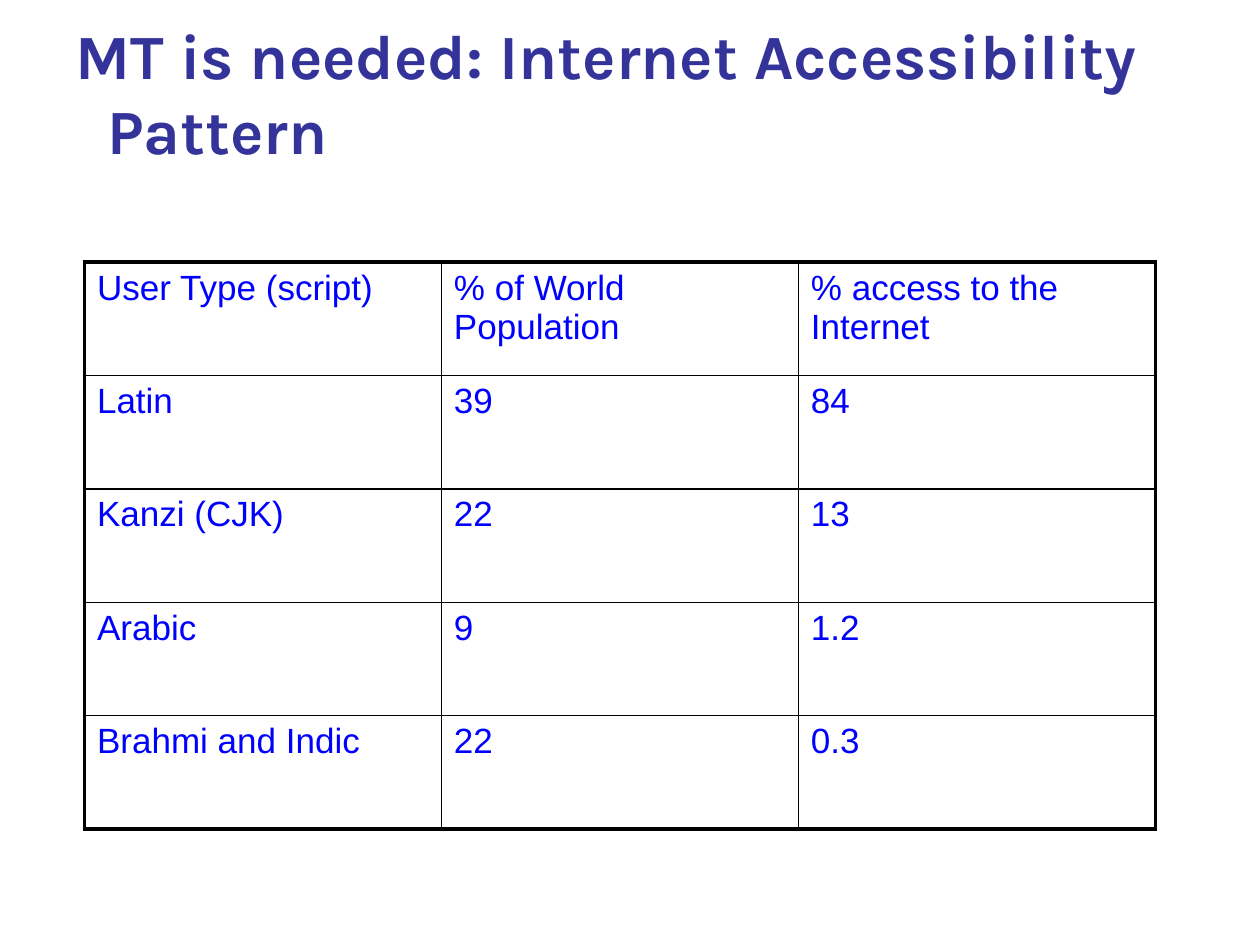
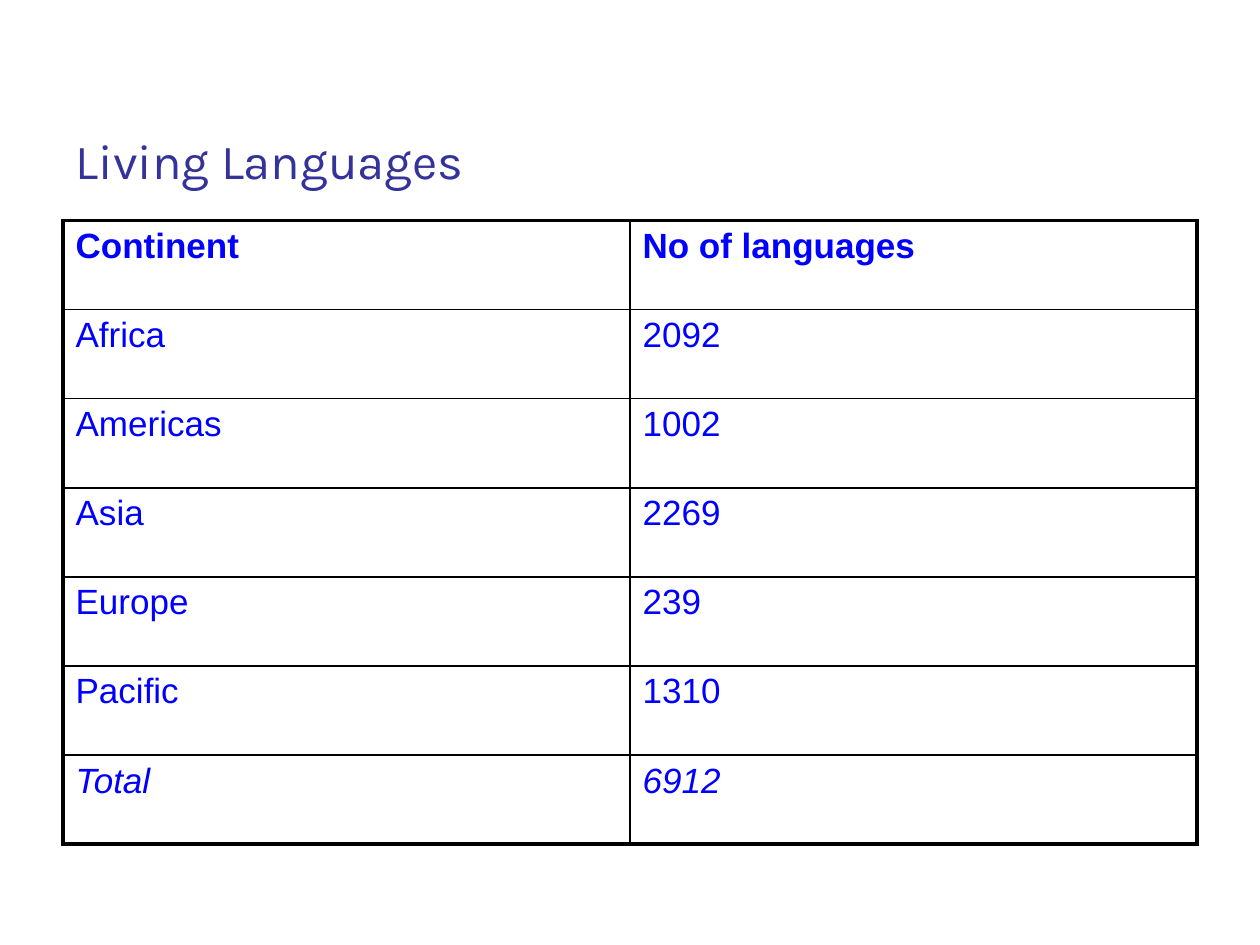
from lxml.etree import SubElement
from pptx import Presentation
from pptx.dml.color import RGBColor
from pptx.enum.text import MSO_ANCHOR, MSO_AUTO_SIZE, PP_ALIGN
from pptx.oxml.ns import qn
from pptx.util import Inches, Pt

SLIDES = [
    dict(
        title="MT is needed: Internet Accessibility Pattern",
        title_format=dict(size=36, bold=True),
        title_height=1.08,
        hanging=0.25,
        table_box=(0.67, 2.08, 8.5, 4.5),
        rows=[
            ("User Type (script)", "% of World Population", "% access to the Internet"),
            ("Latin", "39", "84"),
            ("Kanzi (CJK)", "22", "13"),
            ("Arabic", "9", "1.2"),
            ("Brahmi and Indic", "22", "0.3"),
        ],
        row_formats={},
    ),
    dict(
        title="Living Languages",
        title_format=dict(size=28),
        title_height=1.25,
        hanging=0,
        table_box=(0.5, 1.75, 9, 4.95),
        rows=[
            ("Continent", "No of languages"),
            ("Africa", "2092"),
            ("Americas", "1002"),
            ("Asia", "2269"),
            ("Europe", "239"),
            ("Pacific", "1310"),
            ("Total", "6912"),
        ],
        row_formats={0: dict(bold=True), 6: dict(italic=True)},
    ),
]

TITLE_COLOR, CELL_COLOR, BORDER_COLOR = "333399", "0000FF", "000000"
TITLE_FONT, CELL_FONT = "Karla", "Arial"
TITLE_LEFT, TITLE_TOP, TITLE_WIDTH = 0.5, 0.3, 9
OUTER_LINE, INNER_LINE = 2.25, 1


def write(tf, text, size=20, font=CELL_FONT, color=CELL_COLOR, bold=False, italic=False):
    p = tf.paragraphs[0]
    p.alignment = PP_ALIGN.LEFT
    r = p.add_run()
    r.text = text
    r.font.name, r.font.size = font, Pt(size)
    r.font.bold, r.font.italic = bold, italic
    r.font.color.rgb = RGBColor.from_string(color)
    return p


def add_title(s, text, height, hanging, text_format):
    sp = s.shapes.title
    sp.left, sp.top = Inches(TITLE_LEFT), Inches(TITLE_TOP)
    sp.width, sp.height = Inches(TITLE_WIDTH), Inches(height)
    tf = sp.text_frame
    tf.word_wrap, tf.auto_size = True, MSO_AUTO_SIZE.NONE
    tf.vertical_anchor = MSO_ANCHOR.BOTTOM
    p = write(tf, text, font=TITLE_FONT, color=TITLE_COLOR, **text_format)
    if hanging:
        pPr = p._p.get_or_add_pPr()
        pPr.set("marL", str(Inches(hanging)))
        pPr.set("indent", str(-Inches(hanging)))


def set_borders(cell, outer_sides):
    """Draw all four cell sides, heavier where they edge the table."""
    tcPr = cell._tc.get_or_add_tcPr()
    for side in "LRTB":
        width = OUTER_LINE if side in outer_sides else INNER_LINE
        ln = SubElement(tcPr, qn(f"a:ln{side}"), w=str(Pt(width)))
        fill = SubElement(ln, qn("a:solidFill"))
        SubElement(fill, qn("a:srgbClr"), val=BORDER_COLOR)


def add_grid(s, rows, box, row_formats):
    left, top, width, height = map(Inches, box)
    n_rows, n_cols = len(rows), len(rows[0])
    table = s.shapes.add_table(n_rows, n_cols, left, top, width, height).table
    table.first_row = table.horz_banding = False
    for i, row in enumerate(rows):
        for j, text in enumerate(row):
            cell = table.cell(i, j)
            edges = dict(L=j == 0, R=j == n_cols - 1, T=i == 0, B=i == n_rows - 1)
            set_borders(cell, [side for side, outer in edges.items() if outer])
            cell.fill.background()
            write(cell.text_frame, text, **row_formats.get(i, {}))


def main():
    prs = Presentation()
    prs.slide_width, prs.slide_height = Inches(10), Inches(7.5)
    title_only = prs.slide_layouts[5]
    for content in SLIDES:
        s = prs.slides.add_slide(title_only)
        add_title(s, content["title"], content["title_height"],
                  content["hanging"], content["title_format"])
        add_grid(s, content["rows"], content["table_box"], content["row_formats"])
    prs.save("out.pptx")


if __name__ == "__main__":
    main()
